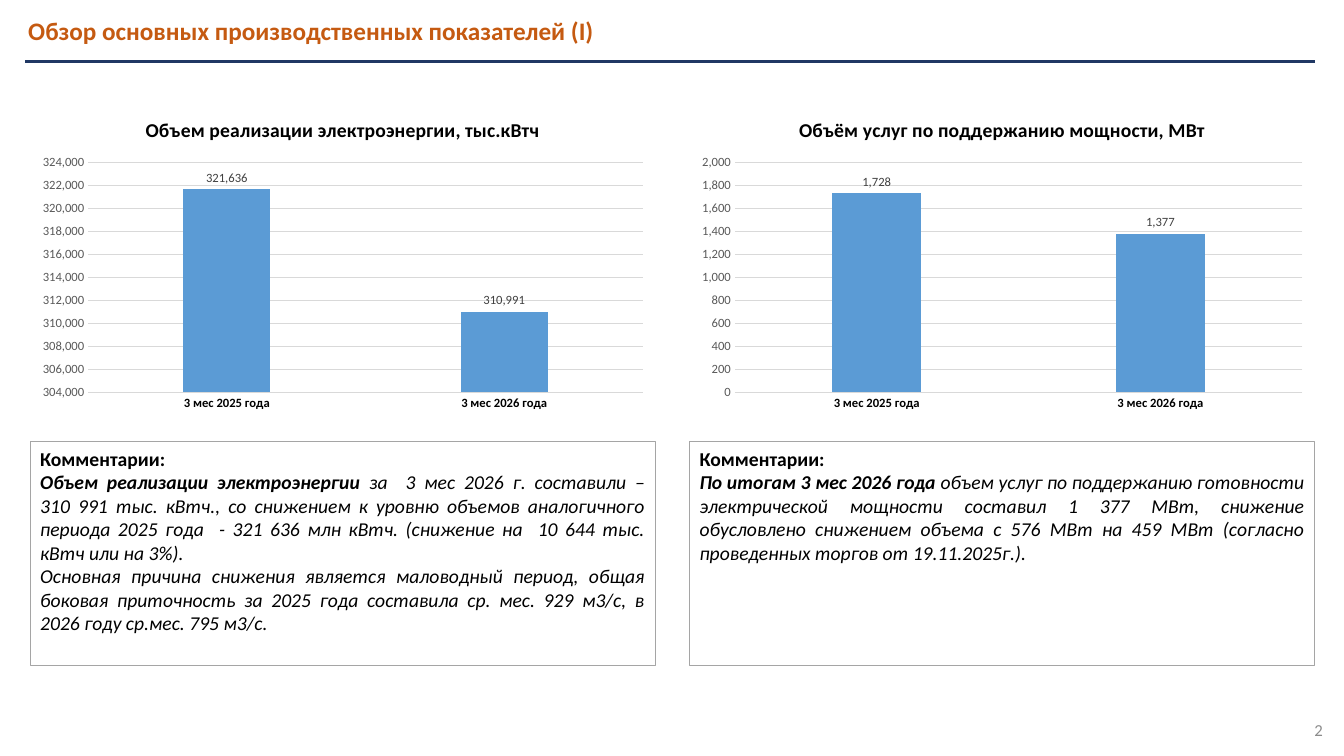
from lxml.etree import SubElement
from pptx import Presentation
from pptx.chart.data import CategoryChartData
from pptx.dml.color import RGBColor
from pptx.enum.chart import XL_CHART_TYPE as Chart, XL_LABEL_POSITION as LabelPos, XL_TICK_MARK as Tick
from pptx.enum.shapes import MSO_CONNECTOR as Connector, MSO_SHAPE as Shape
from pptx.enum.text import MSO_ANCHOR as Anchor, PP_ALIGN as Align
from pptx.oxml.ns import qn
from pptx.util import Inches, Pt

TITLE = "Обзор основных производственных показателей (I)"
PAGE = "2"
PERIODS = ["3 мес 2025 года", "3 мес 2026 года"]
HEADING = "Комментарии:"
# Each comment paragraph is a list of (text, bold) runs.
PANELS = [
    {
        "title": "Объем реализации электроэнергии, тыс.кВтч",
        "values": (321636, 310991),
        "scale": (304000, 324000, 2000),
        "comments": [
            [("Объем реализации электроэнергии ", True),
             ("за  3 мес 2026 г. составили –\v310 991 тыс. кВтч., со снижением к уровню "
              "объемов аналогичного периода 2025 года  - 321 636 млн кВтч. "
              "(снижение на  10 644 тыс. кВтч или на 3%).", False)],
            [("Основная причина снижения является маловодный период, общая боковая "
              "приточность за 2025 года составила ср. мес. 929 м3/с, "
              "в 2026 году ср.мес. 795 м3/с.", False)],
        ],
    },
    {
        "title": "Объём услуг по поддержанию мощности, МВт",
        "values": (1728, 1377),
        "scale": (0, 2000, 200),
        "comments": [
            [("По итогам 3 мес 2026 года ", True),
             ("объем услуг по поддержанию готовности электрической мощности составил "
              "1 377 МВт, снижение обусловлено снижением объема с 576 МВт на 459 МВт "
              "(согласно проведенных торгов от 19.11.2025г.).", False)],
        ],
    },
]

THEME = {
    "font": "Calibri",
    "title": {"size": 18, "color": "C55A11", "bold": True},
    "page": {"size": 12, "color": "8C8C8C"},
    "heading": {"size": 14, "color": "000000", "bold": True},
    "comment": {"size": 14, "color": "000000", "italic": True},
    "chart": {"size": 10, "color": "000000"},
    "category": {"size": 9, "color": "000000", "bold": True},
    "value": {"size": 9, "color": "595959", "bold": False},
    "label": {"size": 9, "color": "404040", "bold": False},
    "rule": "203864",
    "border": "A5A5A5",
    "grid": "D9D9D9",
    "bar": "5B9BD5",
}
NUMBER = "#,##0"
LEFT, PITCH, WIDTH = 0.3, 6.54, 6.2
CHART_TOP, CHART_HEIGHT = 1, 3.14
BOX_TOP, BOX_HEIGHT = 4.38, 2.22


def rgb(name):
    return RGBColor.from_string(THEME[name])


def style(font, role, **extra):
    fmt = {"name": THEME["font"], **THEME[role], **extra}
    font.color.rgb = RGBColor.from_string(fmt.pop("color"))
    fmt["size"] = Pt(fmt["size"])
    for key, value in fmt.items():
        setattr(font, key, value)


def add_run(p, text, role, **extra):
    """Add a styled run; a vertical tab in the text is a line break."""
    for i, line in enumerate(text.split("\v")):
        if i:
            p.add_line_break()
        r = p.add_run()
        r.text = line
        style(r.font, role, **extra)


def set_line(line, color, width):
    line.color.rgb = rgb(color)
    line.width = Pt(width)


def add_header(s):
    sp = s.shapes.title
    sp.left, sp.top, sp.width, sp.height = map(Inches, (0.18, 0.04, 12.93, 0.57))
    tf = sp.text_frame
    tf.vertical_anchor = Anchor.MIDDLE
    p = tf.paragraphs[0]
    p.alignment, p.line_spacing = Align.LEFT, 0.9
    add_run(p, TITLE, "title")
    rule = s.shapes.add_connector(Connector.STRAIGHT, *map(Inches, (0.25, 0.61, 13.04, 0.61)))
    set_line(rule.line, "rule", 1.5)
    SubElement(rule._element.spPr, qn("a:effectLst"))


def add_page_number(s):
    tf = s.shapes.add_textbox(*map(Inches, (10.22, 7.04, 3, 0.4))).text_frame
    tf.word_wrap, tf.vertical_anchor = True, Anchor.MIDDLE
    p = tf.paragraphs[0]
    p.alignment = Align.RIGHT
    add_run(p, PAGE, "page")


def add_column_chart(s, x, panel):
    data = CategoryChartData(number_format=NUMBER)
    data.categories = PERIODS
    data.add_series(panel["title"], panel["values"])
    box = map(Inches, (x, CHART_TOP, WIDTH, CHART_HEIGHT))
    chart = s.shapes.add_chart(Chart.COLUMN_CLUSTERED, *box, data).chart
    style(chart.font, "chart")
    chart.has_legend = False
    chart.has_title = True
    add_run(chart.chart_title.text_frame.paragraphs[0], panel["title"], "heading")
    chart.chart_title.include_in_layout = False

    plot = chart.plots[0]
    plot.gap_width, plot.overlap, plot.vary_by_categories = 219, -27, False
    fill = plot.series[0].format.fill
    fill.solid()
    fill.fore_color.rgb = rgb("bar")
    plot.has_data_labels = True
    labels = plot.data_labels
    for key, value in {"show_value": True, "position": LabelPos.OUTSIDE_END,
                       "number_format": NUMBER, "number_format_is_linked": False}.items():
        setattr(labels, key, value)
    style(labels.font, "label")

    cat, val = chart.category_axis, chart.value_axis
    for axis, role in ((cat, "category"), (val, "value")):
        axis.major_tick_mark = axis.minor_tick_mark = Tick.NONE
        style(axis.tick_labels.font, role)
    set_line(cat.format.line, "grid", 0.75)
    val.format.line.fill.background()
    set_line(val.major_gridlines.format.line, "grid", 0.75)
    val.minimum_scale, val.maximum_scale, val.major_unit = panel["scale"]
    val.tick_labels.number_format = NUMBER
    val.tick_labels.number_format_is_linked = False


def add_comments(s, x, comments):
    sp = s.shapes.add_shape(Shape.RECTANGLE, *map(Inches, (x, BOX_TOP, WIDTH, BOX_HEIGHT)))
    sp.shadow.inherit = False
    sp.fill.background()
    set_line(sp.line, "border", 0.75)
    tf = sp.text_frame
    tf.word_wrap, tf.vertical_anchor = True, Anchor.TOP
    p = tf.paragraphs[0]
    p.alignment = Align.JUSTIFY
    add_run(p, HEADING, "heading")
    for runs in comments:
        p = tf.add_paragraph()
        p.alignment = Align.JUSTIFY
        for text, bold in runs:
            add_run(p, text, "comment", bold=bold)


def main():
    prs = Presentation()
    prs.slide_width, prs.slide_height = Inches(13.33), Inches(7.5)
    s = prs.slides.add_slide(prs.slide_layouts.get_by_name("Title Only"))
    add_header(s)
    add_page_number(s)
    for i, panel in enumerate(PANELS):
        x = LEFT + i * PITCH
        add_column_chart(s, x, panel)
        add_comments(s, x, panel["comments"])
    prs.save("out.pptx")


if __name__ == "__main__":
    main()
